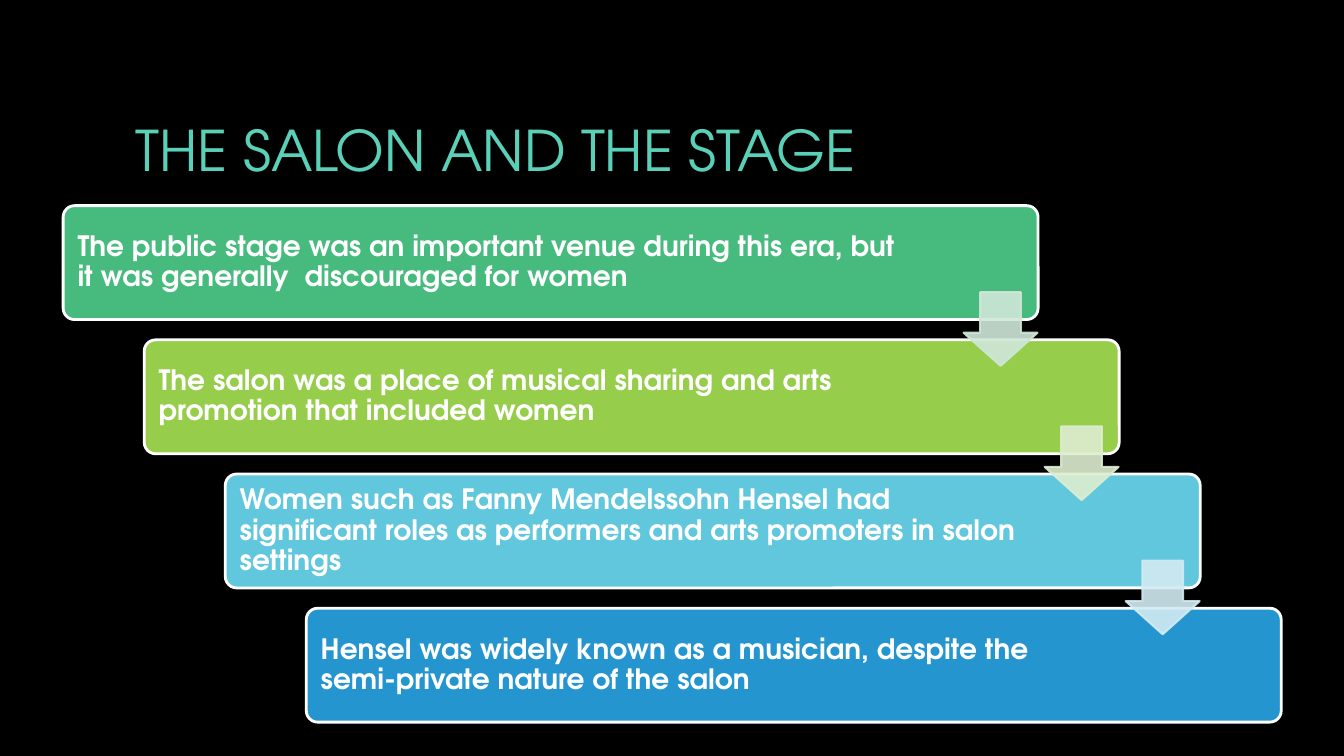
from pptx import Presentation
from pptx import util as u
from pptx.dml.color import RGBColor
from pptx.enum import shapes, text
from pptx.oxml.ns import qn
from lxml import etree

BLACK = RGBColor(0x00, 0x00, 0x00)
WHITE = RGBColor(0xFF, 0xFF, 0xFF)
TEAL = RGBColor(0x5A, 0xD0, 0xB8)
GREEN = RGBColor(0x47, 0xBB, 0x7E)
LIME = RGBColor(0x96, 0xCD, 0x4B)
AQUA = RGBColor(0x61, 0xC7, 0xDD)
BLUE = RGBColor(0x24, 0x95, 0xCF)
MINT = RGBColor(0xCF, 0xE7, 0xD8)
PALE = RGBColor(0xDD, 0xED, 0xD0)
ICE = RGBColor(0xD2, 0xEB, 0xF2)


class Deck:
    """Holds the style and the current slide; places are percent of slide size."""
    font = "TeX Gyre Adventor"

    def __init__(self, show):
        self.show = show
        self.slide = show.slides.add_slide(show.slide_layouts[6])
        fill = self.slide.background.fill
        fill.solid()
        fill.fore_color.rgb = BLACK

    def wide(self, share):
        return round(self.show.slide_width * share / 100)

    def high(self, share):
        return round(self.show.slide_height * share / 100)

    def place(self, x, y, w, h):
        return self.wide(x), self.high(y), self.wide(w), self.high(h)

    def label(self, shape, words, size, color, bold=False):
        frame = shape.text_frame
        frame.word_wrap = True
        frame.vertical_anchor = text.MSO_ANCHOR.MIDDLE
        para = frame.paragraphs[0]
        para.alignment = text.PP_ALIGN.LEFT
        run = para.add_run()
        run.text = words
        font = run.font
        font.name, font.size, font.bold = self.font, u.Pt(size), bold
        font.color.rgb = color
        return frame, para

    def title(self, words, *box):
        shape = self.slide.shapes.add_textbox(*self.place(*box))
        self.label(shape, words, 40, TEAL)

    def block(self, kind, box, color, edge, width, adjust):
        shape = self.slide.shapes.add_shape(kind, *self.place(*box))
        shape.shadow.inherit = False
        shape.fill.solid()
        shape.fill.fore_color.rgb = color
        shape.line.color.rgb = edge
        shape.line.width = u.Pt(width)
        for i, value in enumerate(adjust):
            shape.adjustments[i] = value
        return shape

    def card(self, words, color, gap, *box):
        shape = self.block(shapes.MSO_SHAPE.ROUNDED_RECTANGLE, box,
                           color, WHITE, 2, [0.1])
        frame, para = self.label(shape, words, 20, WHITE, True)
        para.line_spacing = 0.9
        frame.margin_left = u.Inches(0.11)
        frame.margin_right = self.wide(gap)

    def arrow(self, color, *box):
        shape = self.block(shapes.MSO_SHAPE.DOWN_ARROW, box,
                           color, color, 1.5, [0.55, 0.45])
        # Slight transparency on both fill and outline
        for tint in shape._element.spPr.iter(qn("a:srgbClr")):
            etree.SubElement(tint, qn("a:alpha")).set("val", "90000")


# Staircase: first corner and step, in percent of the slide
LEFT, TOP = 4.7, 27.2
RIGHT, DOWN = 6.03, 17.75

# Wording, fill and space kept free at the right
CARDS = [
    ("The public stage was an important venue during this era, but "
     "it was generally  discouraged for women", GREEN, 10.3),
    ("The salon was a place of musical sharing and arts "
     "promotion that included women", LIME, 12.4),
    ("Women such as Fanny Mendelssohn Hensel had significant "
     "roles as performers and arts promoters in salon settings", AQUA, 12.4),
    ("Hensel was widely known as a musician, despite the semi-private "
     "nature of the salon", BLUE, 12.4),
]
ARROWS = [MINT, PALE, ICE]


def main():
    show = Presentation()
    show.slide_width, show.slide_height = u.Inches(13.33), u.Inches(7.5)
    deck = Deck(show)

    # Heading
    deck.title("THE SALON AND THE STAGE", 9.38, 8.93, 81.25, 21.47)

    # Stepped cards
    for i, (words, color, gap) in enumerate(CARDS):
        deck.card(words, color, gap, LEFT + i * RIGHT, TOP + i * DOWN, 72.54, 15.07)

    # Arrows from each card to the next
    for i, color in enumerate(ARROWS):
        deck.arrow(color, LEFT + 67 + i * RIGHT, TOP + 11.45 + i * DOWN, 5.5, 9.75)

    show.save("out.pptx")


if __name__ == "__main__":
    main()
